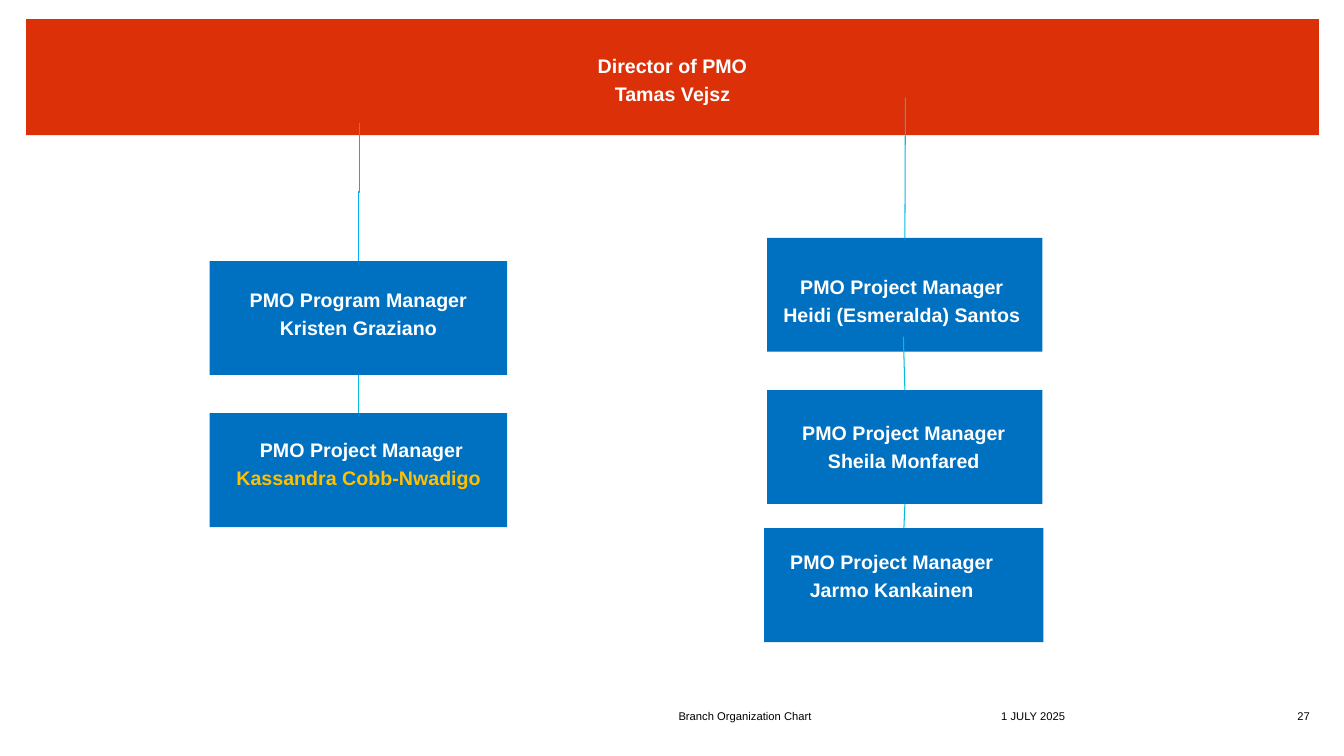
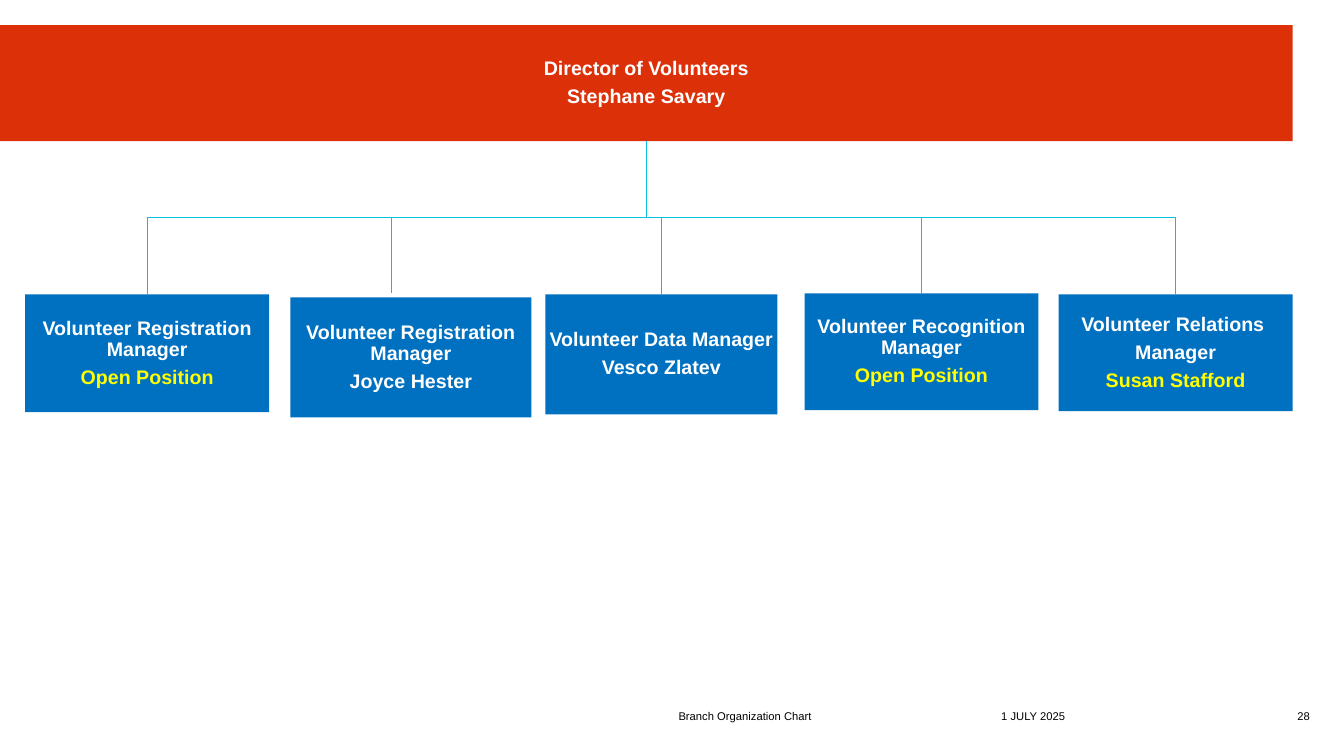
from dataclasses import dataclass

import lxml.etree
import pptx
import pptx.dml.color
import pptx.enum.shapes
import pptx.enum.text
import pptx.oxml.ns
import pptx.util

Inches = pptx.util.Inches
Pt = pptx.util.Pt
RGBColor = pptx.dml.color.RGBColor
Align = pptx.enum.text.PP_ALIGN
Anchor = pptx.enum.text.MSO_ANCHOR
Connector = pptx.enum.shapes.MSO_CONNECTOR
qn = pptx.oxml.ns.qn

RED = RGBColor(0xDC, 0x30, 0x09)
BLUE = RGBColor(0x00, 0x70, 0xC0)
SKY = RGBColor(0x00, 0xB0, 0xF0)
TEAL = RGBColor(0x00, 0xBD, 0xDF)
CYAN = RGBColor(0x05, 0xBF, 0xE0)
WHITE = RGBColor(0xFF, 0xFF, 0xFF)
BLACK = RGBColor(0x00, 0x00, 0x00)
GOLD = RGBColor(0xFF, 0xC0, 0x00)
YELLOW = RGBColor(0xFF, 0xFF, 0x00)

FONT = "Arial"
FIRST_NUMBER = 27
MARGIN = 0.01
BANNER_WIDTH, BANNER_HEIGHT = 12.82, 1.15
TOP, BOTTOM = 0, 2

Point = tuple[float, float]


@dataclass(frozen=True)
class Position:
    """One box of the chart; shift moves its text off the centre."""
    left: float
    top: float
    width: float
    height: float
    lines: tuple[str, ...]
    name_color: RGBColor = WHITE
    shift: Point = (0, 0)

    @property
    def top_middle(self) -> Point:
        return self.left + self.width / 2, self.top


PROGRAM = Position(2.08, 2.59, 2.95, 1.13,
                   ("PMO Program Manager", "Kristen Graziano"), shift=(0, -0.03))
KASSANDRA = Position(2.08, 4.1, 2.95, 1.13,
                     ("PMO Project Manager", "Kassandra Cobb-Nwadigo "), GOLD, (0.03, -0.05))
HEIDI = Position(7.61, 2.36, 2.73, 1.13,
                 ("PMO Project Manager", "Heidi (Esmeralda) Santos"), shift=(-0.03, 0.07))
SHEILA = Position(7.61, 3.87, 2.73, 1.13,
                  ("PMO Project Manager", "Sheila Monfared"), shift=(-0.01, 0.01))
JARMO = Position(7.58, 5.24, 2.77, 1.13,
                 ("PMO Project Manager", "Jarmo Kankainen"), shift=(-0.12, -0.08))

VOLUNTEER_TEAM = (
    Position(0.25, 2.92, 2.42, 1.17,
             ("Volunteer Registration Manager", "Open Position"), YELLOW),
    Position(2.88, 2.95, 2.39, 1.19,
             ("Volunteer Registration Manager", "Joyce Hester")),
    Position(5.41, 2.92, 2.3, 1.19, ("Volunteer Data Manager", "Vesco Zlatev")),
    Position(7.98, 2.91, 2.32, 1.16,
             ("Volunteer Recognition Manager", "Open Position"), YELLOW),
    Position(10.5, 2.92, 2.32, 1.16,
             ("Volunteer Relations ", "Manager", "Susan Stafford"), YELLOW),
)


def style_run(run, size: float, color: RGBColor, bold: bool = False) -> None:
    run.font.name = FONT
    run.font.size = Pt(size)
    run.font.bold = bold
    run.font.color.rgb = color


def fill_box(box, position: Position, color: RGBColor) -> None:
    box.fill.solid()
    box.fill.fore_color.rgb = color
    box.line.fill.background()
    frame = box.text_frame
    frame.word_wrap = True
    frame.auto_size = pptx.enum.text.MSO_AUTO_SIZE.NONE
    frame.vertical_anchor = Anchor.MIDDLE
    across, down = position.shift
    frame.margin_left = Inches(MARGIN + max(0, 2 * across))
    frame.margin_right = Inches(MARGIN + max(0, -2 * across))
    frame.margin_top = Inches(MARGIN + max(0, 2 * down))
    frame.margin_bottom = Inches(MARGIN + max(0, -2 * down))
    last = len(position.lines) - 1
    for index, line in enumerate(position.lines):
        para = frame.add_paragraph() if index else frame.paragraphs[0]
        para.alignment = Align.CENTER
        para.line_spacing = 0.9
        if index:
            para.space_before = Pt(4.9)
        run = para.add_run()
        run.text = line
        style_run(run, 14, position.name_color if index == last else WHITE, bold=True)


def add_position(slide, position: Position):
    box = slide.shapes.add_shape(
        pptx.enum.shapes.MSO_SHAPE.RECTANGLE, Inches(position.left),
        Inches(position.top), Inches(position.width), Inches(position.height))
    box.shadow.inherit = False
    fill_box(box, position, BLUE)
    return box


def add_banner(slide, position: Position) -> None:
    """Turn the title placeholder into the director's band."""
    banner = slide.shapes.title
    banner.left, banner.top = Inches(position.left), Inches(position.top)
    banner.width, banner.height = Inches(position.width), Inches(position.height)
    fill_box(banner, position, RED)


def add_line(slide, start: Point, end: Point, color: RGBColor,
             kind: Connector = Connector.STRAIGHT):
    line = slide.shapes.add_connector(kind, *map(Inches, start + end))
    line.line.color.rgb = color
    line.line.width = Pt(0.75)
    lxml.etree.SubElement(line._element.spPr, qn("a:effectLst"))
    return line


def add_vertical_elbow(slide, start: Point, end: Point, color: RGBColor) -> None:
    """Draw a bent connector that leaves and arrives vertically, by turning it."""
    middle_x, middle_y = (start[0] + end[0]) / 2, (start[1] + end[1]) / 2
    half_run, half_drop = abs(end[0] - start[0]) / 2, (end[1] - start[1]) / 2
    elbow = add_line(slide, (middle_x - half_drop, middle_y - half_run),
                     (middle_x + half_drop, middle_y + half_run), color, Connector.ELBOW)
    frame = elbow._element.spPr.find(qn("a:xfrm"))
    if end[0] < start[0]:
        frame.set("rot", str(90 * 60000))
    else:
        frame.set("rot", str(270 * 60000))
        frame.set("flipH", "1")


def link_boxes(slide, upper, lower, color: RGBColor) -> None:
    line = add_line(slide, (0, 0), (1, 1), color)
    line.begin_connect(upper, BOTTOM)
    line.end_connect(lower, TOP)


def add_footer_text(slide, left: float, width: float, text: str,
                    align: Align = Align.LEFT):
    box = slide.shapes.add_textbox(Inches(left), Inches(6.95), Inches(width), Inches(0.22))
    frame = box.text_frame
    frame.word_wrap = True
    frame.vertical_anchor = Anchor.BOTTOM
    frame.margin_left = frame.margin_right = frame.margin_top = frame.margin_bottom = 0
    para = frame.paragraphs[0]
    para.alignment = align
    run = para.add_run()
    run.text = text
    style_run(run, 8, BLACK)
    return run


def add_slide_number(slide, number: int) -> None:
    run = add_footer_text(slide, 12.54, 0.45, str(number), Align.RIGHT)._r
    field = lxml.etree.Element(qn("a:fld"), type="slidenum",
                               id="{B6F15528-21DE-4FAA-801E-634DDDAF4B2B}")
    run.getparent().replace(run, field)
    field.extend(list(run))


def new_slide(deck, number: int):
    slide = deck.slides.add_slide(deck.slide_layouts.get_by_name("Title Only"))
    add_footer_text(slide, 6.73, 3.06, "Branch Organization Chart")
    add_footer_text(slide, 9.93, 1.99, "1 JULY 2025")
    add_slide_number(slide, number)
    return slide


def build_pmo(deck) -> None:
    slide = new_slide(deck, FIRST_NUMBER)
    add_banner(slide, Position(0.26, 0.19, BANNER_WIDTH, BANNER_HEIGHT,
                               ("Director of PMO", "Tamas Vejsz"), shift=(0, 0.04)))
    program, kassandra, heidi, sheila, jarmo = [
        add_position(slide, position)
        for position in (PROGRAM, KASSANDRA, HEIDI, SHEILA, JARMO)]

    add_vertical_elbow(slide, (3.57, 1.22), PROGRAM.top_middle, SKY)
    link_boxes(slide, program, kassandra, CYAN)
    for start, box, position in (((8.98, 0.97), heidi, HEIDI),
                                 ((8.96, 3.34), sheila, SHEILA)):
        line = add_line(slide, start, position.top_middle, TEAL)
        line.end_connect(box, TOP)
    link_boxes(slide, sheila, jarmo, TEAL)


def build_volunteers(deck) -> None:
    slide = new_slide(deck, FIRST_NUMBER + 1)
    director = Position(0, 0.25, BANNER_WIDTH, BANNER_HEIGHT,
                        ("Director of Volunteers", "Stephane Savary"))
    add_banner(slide, director)
    boxes = [add_position(slide, position) for position in VOLUNTEER_TEAM]

    trunk = (director.top_middle[0], director.top + director.height)
    for outer in (VOLUNTEER_TEAM[0], VOLUNTEER_TEAM[-1]):
        add_vertical_elbow(slide, trunk, outer.top_middle, CYAN)
    rail = 2.15
    add_line(slide, (3.88, rail), (3.88, 2.91), CYAN)
    for index in (2, 3):
        end = VOLUNTEER_TEAM[index].top_middle
        stem = add_line(slide, (end[0], rail), end, CYAN)
        stem.end_connect(boxes[index], TOP)


def main() -> None:
    deck = pptx.Presentation()
    deck.slide_width, deck.slide_height = Inches(13.33), Inches(7.5)
    deck.element.set("firstSlideNum", str(FIRST_NUMBER))
    build_pmo(deck)
    build_volunteers(deck)
    deck.save("out.pptx")


if __name__ == "__main__":
    main()
